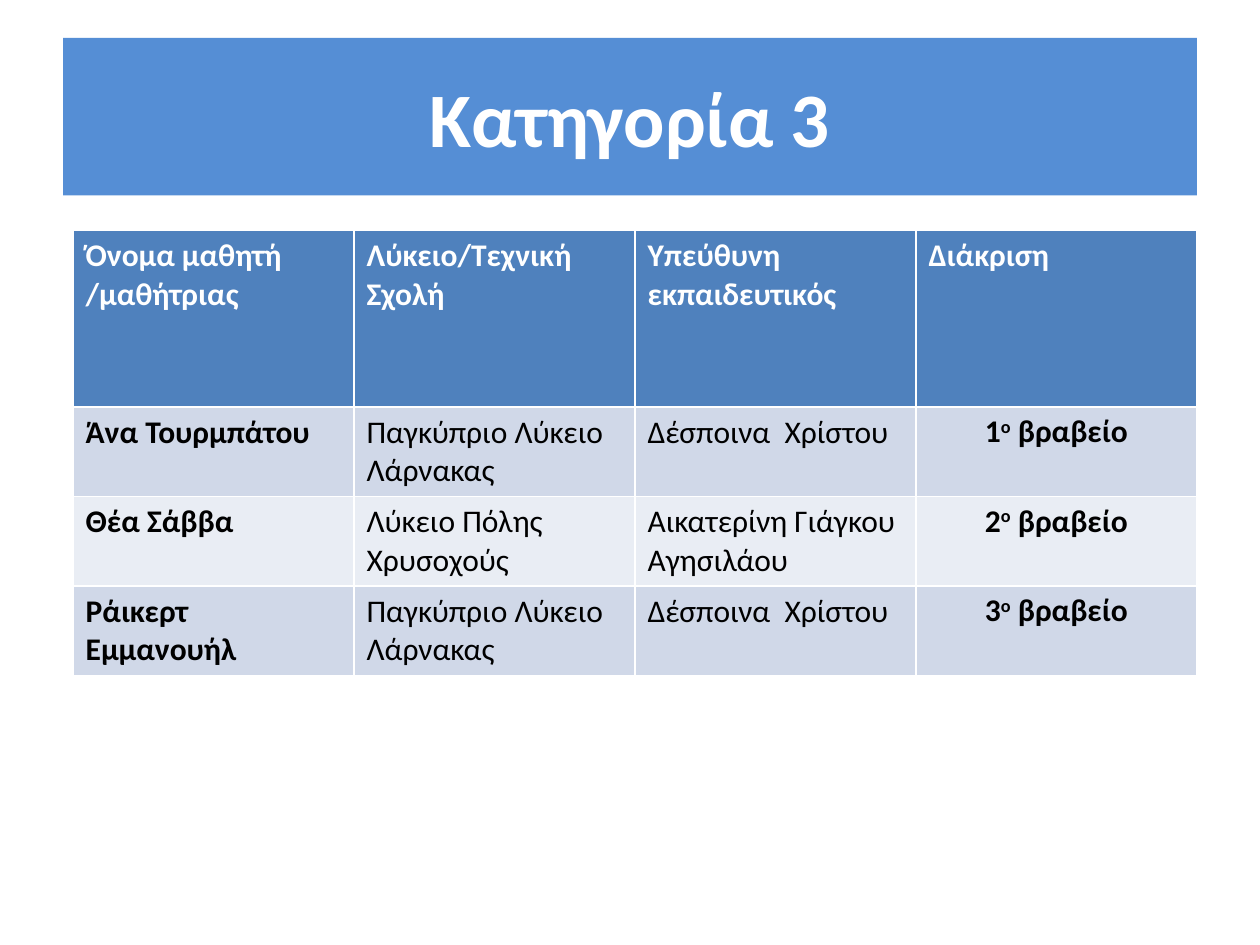
from pptx import Presentation
from pptx.dml.color import RGBColor
from pptx.enum.text import MSO_ANCHOR as Anchor, PP_ALIGN as Align
from pptx.util import Inches, Pt

WHITE, BLACK = "FFFFFF", "000000"
TITLE_BLUE, HEADER_BLUE = "558ED5", "4F81BD"
BANDS = ("D0D8E8", "E9EDF4")

HEADERS = ("Όνομα μαθητή\n/μαθήτριας", "Λύκειο/Τεχνική Σχολή",
           "Υπεύθυνη εκπαιδευτικός", "Διάκριση")
# Student, school and teacher, in order of prize
WINNERS = (
    ("Άνα Τουρμπάτου", "Παγκύπριο Λύκειο Λάρνακας", "Δέσποινα  Χρίστου"),
    ("Θέα Σάββα", "Λύκειο Πόλης Χρυσοχούς", "Αικατερίνη Γιάγκου Αγησιλάου"),
    ("Ράικερτ Εμμανουήλ", "Παγκύπριο Λύκειο Λάρνακας", "Δέσποινα  Χρίστου"),
)


def paint(fill, color):
    fill.solid()
    fill.fore_color.rgb = RGBColor.from_string(color)


def style_text(frame, size, color, bold):
    for para in frame.paragraphs:
        font = para.font
        font.name, font.size, font.bold = "Calibri", Pt(size), bold
        font.color.rgb = RGBColor.from_string(color)


def add_title(page, text):
    title = page.shapes.title
    title.left, title.top = Inches(0.5), Inches(0.3)
    title.width, title.height = Inches(9), Inches(1.25)
    paint(title.fill, TITLE_BLUE)
    frame = title.text_frame
    frame.text = text
    frame.vertical_anchor = Anchor.MIDDLE
    frame.paragraphs[0].alignment = Align.CENTER
    style_text(frame, 44, WHITE, True)


def fill_cell(cell, text, fill, color, bold):
    paint(cell.fill, fill)
    cell.text_frame.text = text
    style_text(cell.text_frame, 18, color, bold)


def fill_prize(cell, place, fill):
    paint(cell.fill, fill)
    cell.margin_left = cell.margin_right = Inches(0.07)
    cell.margin_top = cell.margin_bottom = 0
    para = cell.text_frame.paragraphs[0]
    para.alignment, para.line_spacing = Align.CENTER, 1.15
    for text in (str(place), "ο", " βραβείο"):
        span = para.add_run()
        span.text = text
        if text == "ο":  # raised ordinal ending
            span._r.get_or_add_rPr().set("baseline", "30000")
    style_text(cell.text_frame, 18, BLACK, True)


def add_winners(page):
    table = page.shapes.add_table(
        len(WINNERS) + 1, len(HEADERS),
        Inches(0.58), Inches(1.83), Inches(8.92), Inches(3.5)).table
    table.rows[0].height = Inches(1.4)
    for column, text in enumerate(HEADERS):
        fill_cell(table.cell(0, column), text, HEADER_BLUE, WHITE, True)
    for place, winner in enumerate(WINNERS, 1):
        table.rows[place].height = Inches(0.7)
        band = BANDS[(place - 1) % 2]
        for column, text in enumerate(winner):
            fill_cell(table.cell(place, column), text, band, BLACK, column == 0)
        fill_prize(table.cell(place, len(winner)), place, band)


def main():
    deck = Presentation()
    deck.slide_width, deck.slide_height = Inches(10), Inches(7.5)
    page = deck.slides.add_slide(deck.slide_layouts[5])  # title only
    add_title(page, "Κατηγορία 3")
    add_winners(page)
    deck.save("out.pptx")


if __name__ == "__main__":
    main()
